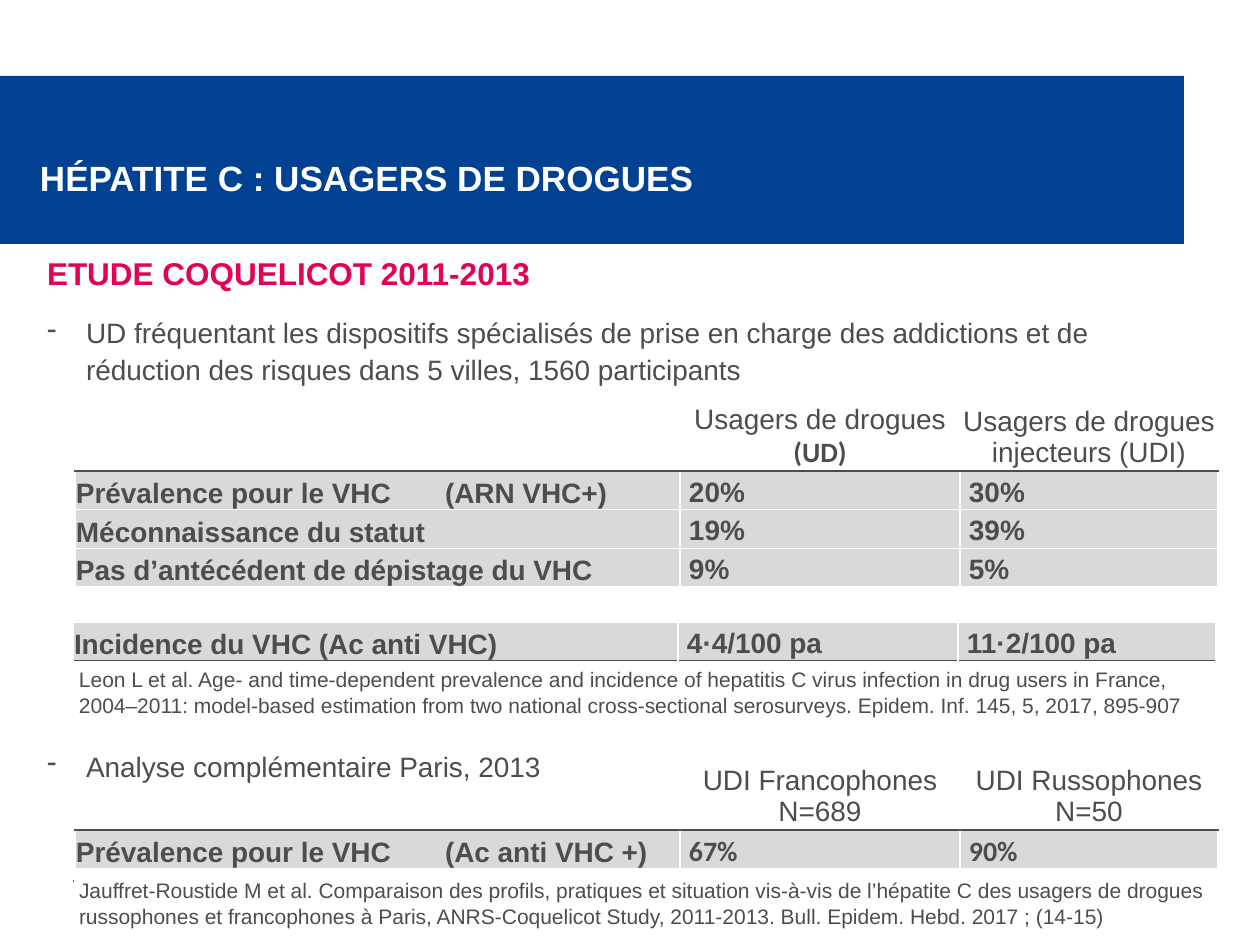
"""Build the slide on hepatitis C among drug users."""
from dataclasses import dataclass

from lxml import etree
from pptx import Presentation
from pptx.dml.color import RGBColor
from pptx.enum.shapes import MSO_CONNECTOR, MSO_SHAPE
from pptx.enum.text import MSO_ANCHOR, PP_ALIGN
from pptx.oxml.ns import qn
from pptx.util import Emu, Pt

LEFT, CENTER = PP_ALIGN.LEFT, PP_ALIGN.CENTER
TOP, MIDDLE, BOTTOM = MSO_ANCHOR.TOP, MSO_ANCHOR.MIDDLE, MSO_ANCHOR.BOTTOM
RECTANGLE = MSO_SHAPE.RECTANGLE
STRAIGHT = MSO_CONNECTOR.STRAIGHT
BLANK_LAYOUT = 6
PX_PER_INCH = 126


def px(length):
    return Emu(round(length * 914400 / PX_PER_INCH))


@dataclass(frozen=True)
class Theme:
    blue: str = "004192"
    pink: str = "E30056"
    gray: str = "4D4D4F"
    band: str = "D9D9D9"
    white: str = "FFFFFF"
    font: str = "Arial"
    alternate_font: str = "Calibri"
    title: int = 20
    heading: int = 18
    body: int = 16
    citation: int = 12


THEME = Theme()


def write(paragraph, text, size=THEME.body, color=THEME.gray, font=THEME.font,
          bold=False, align=LEFT, spacing=1.0, before=0, bullet=None, tab=None):
    properties = paragraph._p.get_or_add_pPr()
    if bullet:
        properties.set("marL", str(px(39)))
        properties.set("indent", str(px(-39)))
        etree.SubElement(properties, qn("a:buChar")).set("char", bullet)
    if tab:
        tabs = etree.SubElement(properties, qn("a:tabLst"))
        etree.SubElement(tabs, qn("a:tab"), pos=str(px(tab)), algn="l")
    paragraph.alignment = align
    paragraph.line_spacing = spacing
    if before:
        paragraph.space_before = Pt(before)
    run = paragraph.add_run()
    run.text = text
    run.font.name = font
    run.font.size = Pt(size)
    run.font.bold = bold
    run.font.color.rgb = RGBColor.from_string(color)


def fill_frame(frame, entries, **shared):
    for index, (text, own) in enumerate(entries):
        paragraph = frame.add_paragraph() if index else frame.paragraphs[0]
        write(paragraph, text, **{**shared, **own})


class SlideBuilder:
    def __init__(self, slide, theme):
        self.slide = slide
        self.theme = theme

    def banner(self, left, top, width, height):
        shape = self.slide.shapes.add_shape(
            RECTANGLE, px(left), px(top), px(width), px(height))
        shape.shadow.inherit = False
        shape.fill.solid()
        shape.fill.fore_color.rgb = RGBColor.from_string(self.theme.blue)
        shape.line.fill.background()

    def rule(self, left, right, y):
        line = self.slide.shapes.add_connector(
            STRAIGHT, px(left), px(y), px(right), px(y))
        line.line.color.rgb = RGBColor.from_string(self.theme.gray)
        line.line.width = Pt(0.75)
        etree.SubElement(line._element.spPr, qn("a:effectLst"))

    def text(self, left, top, width, height, entries, inset=(12, 6),
             anchor=TOP, fill=None, **shared):
        box = self.slide.shapes.add_textbox(px(left), px(top), px(width), px(height))
        if fill:
            box.fill.solid()
            box.fill.fore_color.rgb = RGBColor.from_string(fill)
        frame = box.text_frame
        frame.word_wrap = True
        frame.vertical_anchor = anchor
        frame.margin_left = frame.margin_right = px(inset[0])
        frame.margin_top = frame.margin_bottom = px(inset[1])
        fill_frame(frame, entries, **shared)

    def citation(self, top, width, *lines):
        self.text(74, top, width, 50, [(line, {}) for line in lines],
                  inset=(5, 0), fill=self.theme.white, size=self.theme.citation)

    def borders(self, cell, top, bottom):
        properties = cell._tc.get_or_add_tcPr()
        white = self.theme.white
        sides = (("L", white), ("R", white), ("T", top), ("B", bottom))
        for index, (side, color) in enumerate(sides):
            line = etree.Element(qn(f"a:ln{side}"), w=str(Pt(1)))
            solid = etree.SubElement(line, qn("a:solidFill"))
            etree.SubElement(solid, qn("a:srgbClr"), val=color)
            properties.insert(index, line)

    def cell(self, cell, entries, fill, anchor, side_margin, **shared):
        cell.fill.solid()
        cell.fill.fore_color.rgb = RGBColor.from_string(fill)
        cell.vertical_anchor = anchor
        cell.margin_left, cell.margin_right = px(side_margin), px(1)
        cell.margin_top = cell.margin_bottom = 0
        fill_frame(cell.text_frame, entries, **shared)

    def table(self, left, top, rows, header=None, value_font=None):
        theme = self.theme
        widths = (605, 280, 258)
        heights = ([68] if header else []) + [38] * len(rows)
        table = self.slide.shapes.add_table(
            len(heights), len(widths), px(left), px(top),
            px(sum(widths)), px(sum(heights))).table
        table.first_row = table.horz_banding = False
        for column, width in zip(table.columns, widths):
            column.width = px(width)
        for row, height in zip(table.rows, heights):
            row.height = px(height)
        for column, entries in enumerate(header or []):
            self.cell(table.cell(0, column), entries, theme.white, MIDDLE, 1,
                      align=CENTER)
        first = len(heights) - len(rows)
        for row, (label, *values) in enumerate(rows, first):
            self.cell(table.cell(row, 0), [(label, {})], theme.band, BOTTOM, 1,
                      bold=True, tab=369 if "\t" in label else None)
            for column, value in enumerate(values, 1):
                self.cell(table.cell(row, column), [(value, {})], theme.band,
                          MIDDLE, 9, bold=True, spacing=1.15,
                          font=value_font or theme.font)
        dark_edge = 1 if header else len(heights)
        for row in range(len(heights)):
            top_color, bottom_color = (
                theme.gray if edge == dark_edge else theme.white
                for edge in (row, row + 1))
            for column in range(len(widths)):
                self.borders(table.cell(row, column), top_color, bottom_color)


def main():
    presentation = Presentation()
    presentation.slide_width, presentation.slide_height = px(1260), px(945)
    slide = presentation.slides.add_slide(presentation.slide_layouts[BLANK_LAYOUT])
    builder = SlideBuilder(slide, THEME)

    builder.banner(0, 76, 1184, 168)
    builder.rule(73, 1184, 881)
    builder.text(35, 103, 942, 129, [("HÉPATITE C : USAGERS DE DROGUES", {})],
                 inset=(5, 0), anchor=MIDDLE, size=THEME.title,
                 color=THEME.white, bold=True, spacing=1.5)
    builder.text(35, 244, 1181, 150, [
        ("ETUDE COQUELICOT 2011-2013",
         {"size": THEME.heading, "color": THEME.pink, "bold": True}),
        ("UD fréquentant les dispositifs spécialisés de prise en charge des "
         "addictions et de réduction des risques dans 5 villes, 1560 participants",
         {"bullet": "-", "before": 12}),
    ], spacing=1.1)
    builder.table(75, 403, [
        ("Prévalence pour le VHC\t(ARN VHC+)", "20%", "30%"),
        ("Méconnaissance du statut", "19%", "39%"),
        ("Pas d’antécédent de dépistage du VHC", "9%", "5%"),
    ], header=[
        [],
        [("Usagers de drogues", {}),
         ("(UD)", {"font": THEME.alternate_font, "bold": True})],
        [("Usagers de drogues injecteurs (UDI)", {})],
    ])
    builder.table(75, 762, [
        ("Prévalence pour le VHC\t(Ac anti VHC +)", "67%", "90%"),
    ], header=[
        [],
        [("UDI Francophones", {}), ("N=689", {})],
        [("UDI Russophones", {}), ("N=50", {})],
    ], value_font=THEME.alternate_font)
    builder.text(35, 740, 1181, 50, [("Analyse complémentaire Paris, 2013", {})],
                 bullet="-", spacing=1.1)
    builder.citation(
        878, 1142,
        "Jauffret-Roustide M et al. Comparaison des profils, pratiques et situation "
        "vis-à-vis de l’hépatite C des usagers de drogues russophones et francophones "
        "à Paris, ANRS-Coquelicot Study, 2011-2013. Bull. Epidem. Hebd. 2017 ; (14-15)")
    builder.citation(
        667, 1160,
        "Leon L et al. Age- and time-dependent prevalence and incidence of hepatitis C "
        "virus infection in drug users in France,",
        "2004–2011: model-based estimation from two national cross-sectional "
        "serosurveys. Epidem. Inf. 145, 5, 2017, 895-907")
    builder.table(73, 622, [
        ("Incidence du VHC (Ac anti VHC)", "4·4/100 pa", "11·2/100 pa"),
    ])
    presentation.save("out.pptx")


if __name__ == "__main__":
    main()
